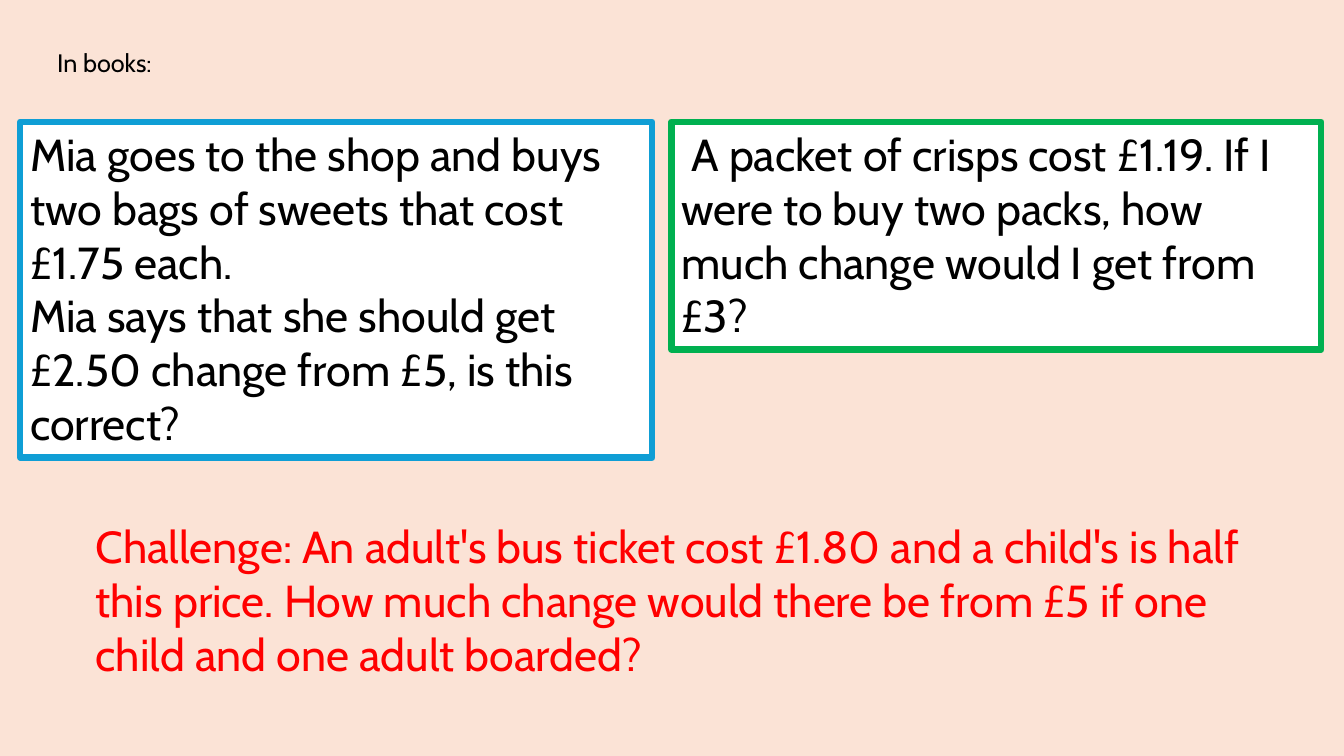
import pptx
import pptx.dml.color
import pptx.enum.text
import pptx.util
from pptx.dml.color import RGBColor
from pptx.util import Cm

PEACH = RGBColor(0xFB, 0xE3, 0xD6)
WHITE = RGBColor(0xFF, 0xFF, 0xFF)
BLACK = RGBColor(0x00, 0x00, 0x00)
RED = RGBColor(0xFF, 0x00, 0x00)
BLUE = RGBColor(0x0F, 0x9E, 0xD5)
GREEN = RGBColor(0x00, 0xB0, 0x50)
FONT = "Cabin"
BORDER_WIDTH = 4.5
QUESTION_TOP = 3.07

# Content: paragraphs, (left, top, width, height) in cm, size, text colour, border
TEXT_BOXES = [
    (["Mia goes to the shop and buys two bags of sweets that cost £1.75 each.",
      "Mia says that she should get £2.50 change from £5, is this correct?"],
     (0.51, QUESTION_TOP, 15.93, 8.46), 32, BLACK, BLUE),
    ([" A packet of crisps cost £1.19. If I were to buy two packs, "
      "how much change would I get from £3?"],
     (16.92, QUESTION_TOP, 16.38, 5.74), 32, BLACK, GREEN),
    (["Challenge: An adult's bus ticket cost £1.80 and a child's is half this price. "
      "How much change would there be from £5 if one child and one adult boarded?"],
     (2.16, 12.95, 29.57, 4.37), 32, RED, None),
    (["In books:"], (1.19, 1.07, 13.79, 1.02), 18, BLACK, None),
]


def add_text_box(slide, paragraphs, box, size, color, border):
    shape = slide.shapes.add_textbox(*(Cm(length) for length in box))
    if border is not None:
        shape.fill.solid()
        shape.fill.fore_color.rgb = WHITE
        shape.line.color.rgb = border
        shape.line.width = pptx.util.Pt(BORDER_WIDTH)
    text_frame = shape.text_frame
    text_frame.word_wrap = True
    text_frame.auto_size = pptx.enum.text.MSO_AUTO_SIZE.SHAPE_TO_FIT_TEXT
    text_frame.text = "\n".join(paragraphs)
    for paragraph in text_frame.paragraphs:
        for run in paragraph.runs:
            run.font.name = FONT
            run.font.size = pptx.util.Pt(size)
            run.font.color.rgb = color


def main():
    # Slide and background
    presentation = pptx.Presentation()
    presentation.slide_width = Cm(33.87)
    presentation.slide_height = Cm(19.05)
    slide = presentation.slides.add_slide(presentation.slide_layouts[6])
    slide.background.fill.solid()
    slide.background.fill.fore_color.rgb = PEACH

    # Questions, challenge and heading
    for text_box in TEXT_BOXES:
        add_text_box(slide, *text_box)

    presentation.save("out.pptx")


if __name__ == "__main__":
    main()
